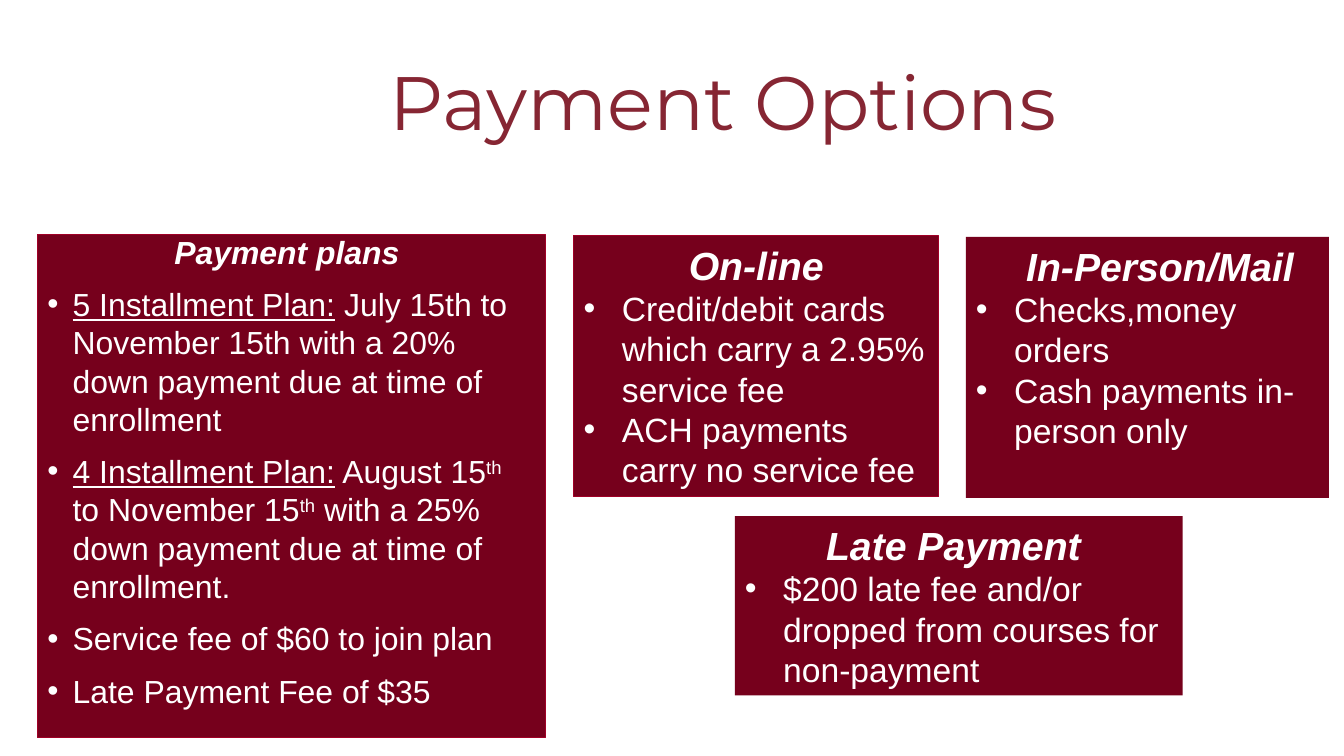
from pptx import Presentation
from pptx.dml.color import RGBColor
from pptx.enum.shapes import MSO_SHAPE
from pptx.enum.text import MSO_ANCHOR, MSO_AUTO_SIZE, PP_ALIGN
from pptx.oxml.ns import qn
from pptx.util import Pt
from lxml import etree

PX = 9144  # 100 px to the inch
RECTANGLE = MSO_SHAPE.RECTANGLE
LEFT, CENTER = PP_ALIGN.LEFT, PP_ALIGN.CENTER
TOP, MIDDLE = MSO_ANCHOR.TOP, MSO_ANCHOR.MIDDLE
NO_AUTOFIT = MSO_AUTO_SIZE.NONE
WHITE = RGBColor(0xFF, 0xFF, 0xFF)
TITLE_RED = RGBColor(0x86, 0x26, 0x33)
MAROON = RGBColor(0x76, 0x00, 0x1C)
EDGE_RED = RGBColor(0xA0, 0x00, 0x26)

TITLE = "Payment Options"
TITLE_BOX = (376, 73, 943, 145)

# Each item is a list of (text, style) runs.
PLANS = {
    "box": (37, 233, 504, 499), "heading": "Payment plans ", "edge": True,
    "items": [
        [("5 Installment Plan:", "underline"),
         (" July 15th to November 15th with a 20% down payment due at time of enrollment", "")],
        [("4 Installment Plan:", "underline"), (" August 15", ""), ("th", "super"),
         (" to November 15", ""), ("th", "super"),
         (" with a 25% down payment due at time of enrollment.", "")],
        [("Service fee of $60 to join plan", "")],
        [("Late Payment Fee of $35", "")],
    ],
}
CARDS = [
    {"box": (569, 234, 362, 259), "heading": "On-line", "edge": True,
     "items": [[("Credit/debit cards which carry a 2.95% service fee", "")],
               [("ACH payments carry no service fee", "")]]},
    {"box": (729, 512, 444, 178), "heading": "Late Payment ",
     "items": [[("$200 late fee and/or dropped from courses for non-payment", "")]]},
    {"box": (958, 235, 360, 259), "heading": "In-Person/Mail", "heading_indent": 50,
     "items": [[("Checks,money orders", "")], [("Cash payments in-person only", "")]]},
]


def place(shape, box):
    shape.left, shape.top, shape.width, shape.height = (length * PX for length in box)


def set_indent(paragraph, indent, bullet):
    properties = paragraph._p.get_or_add_pPr()
    properties.set("marL", str(indent * PX))
    properties.set("indent", str(-indent * PX if bullet else 0))
    if bullet:
        etree.SubElement(properties, qn("a:buFont")).set("typeface", "Arial")
        etree.SubElement(properties, qn("a:buChar")).set("char", "•")
    else:
        etree.SubElement(properties, qn("a:buNone"))


def write(paragraph, runs, size, color=WHITE, font="Arial", heading=False, align=LEFT,
          indent=0, bullet=False, before=0, spacing=None):
    set_indent(paragraph, indent, bullet)
    paragraph.alignment = align
    paragraph.space_before = Pt(before)
    if spacing:
        paragraph.line_spacing = spacing
    for text, style in runs:
        run = paragraph.add_run()
        run.text = text
        run.font.name, run.font.size = font, Pt(size)
        run.font.color.rgb = color
        run.font.bold = run.font.italic = heading
        if style == "underline":
            run.font.underline = True
        elif style == "super":
            run.font._element.set("baseline", "30000")


def fill_card(shape, card, heading_size, size, indent, before=0, heading_spacing=None,
              spacing=None):
    place(shape, card["box"])
    shape.fill.solid()
    shape.fill.fore_color.rgb = MAROON
    if card.get("edge"):
        shape.line.color.rgb = EDGE_RED
        shape.line.width = Pt(0.75)
    else:
        shape.line.fill.background()
    frame = shape.text_frame
    frame.word_wrap = True
    frame.auto_size = NO_AUTOFIT
    frame.vertical_anchor = TOP
    heading_indent = card.get("heading_indent", 0)
    write(frame.paragraphs[0], [(card["heading"], "")], heading_size, heading=True,
          align=LEFT if heading_indent else CENTER, indent=heading_indent,
          spacing=heading_spacing)
    for item in card["items"]:
        write(frame.add_paragraph(), item, size, indent=indent, bullet=True,
              before=before, spacing=spacing)


def main():
    presentation = Presentation()
    presentation.slide_width, presentation.slide_height = 1333 * PX, 750 * PX
    slide = presentation.slides.add_slide(presentation.slide_layouts[1])
    title, body = slide.placeholders

    place(title, TITLE_BOX)
    frame = title.text_frame
    frame.auto_size = NO_AUTOFIT
    frame.vertical_anchor = MIDDLE
    frame.margin_bottom = 85 * PX
    write(frame.paragraphs[0], [(TITLE, "")], 54, color=TITLE_RED, font="Montserrat",
          spacing=0.9)

    fill_card(body, PLANS, 22.8, 22.8, 25, before=10, heading_spacing=0.8)
    for card in CARDS:
        shape = slide.shapes.add_shape(RECTANGLE, *(length * PX for length in card["box"]))
        shape.shadow.inherit = False
        fill_card(shape, card, 28, 24, 38)

    presentation.save("out.pptx")


if __name__ == "__main__":
    main()
